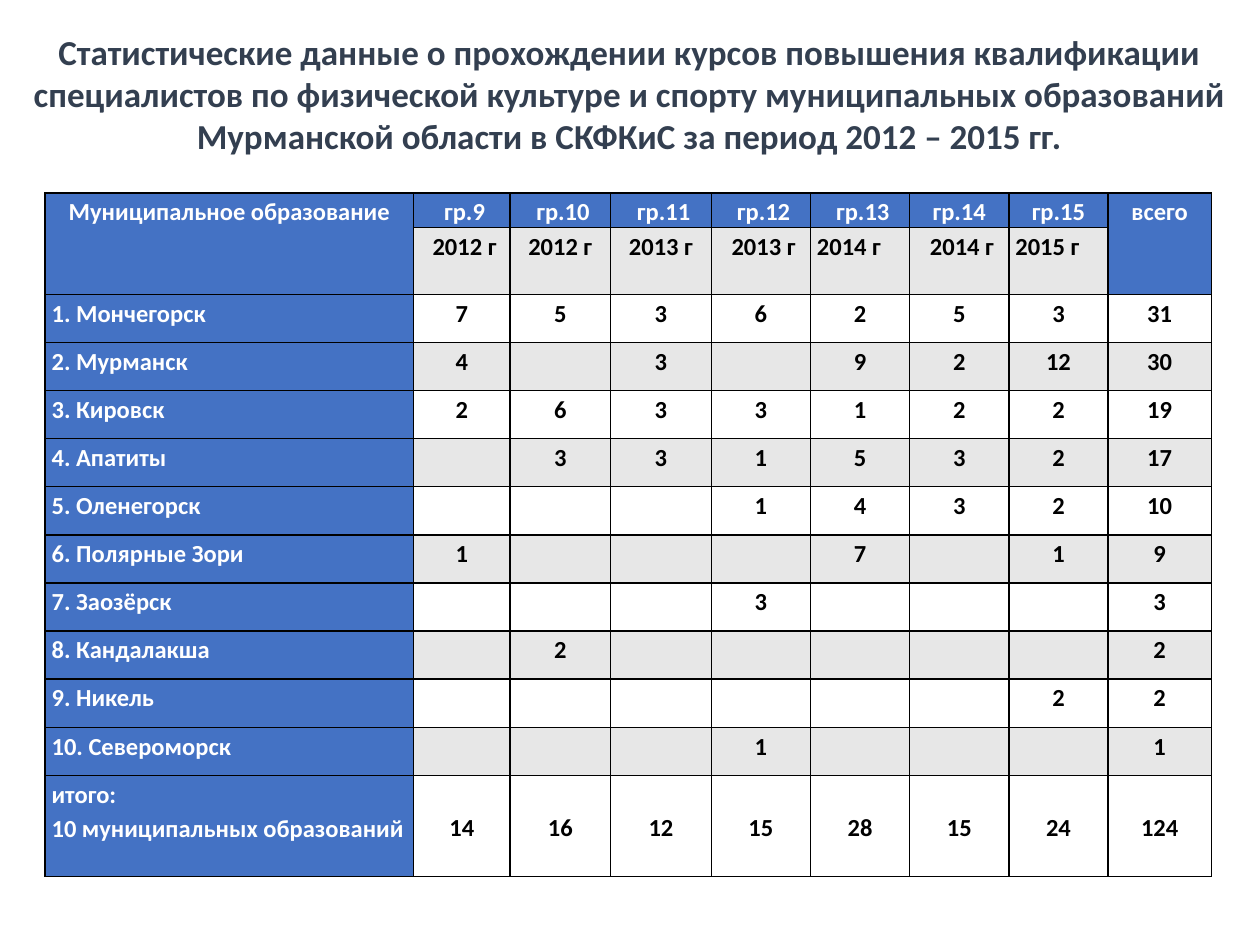
from dataclasses import dataclass

from lxml.etree import SubElement as Sub
from pptx import Presentation
from pptx.dml.color import RGBColor as RGB
from pptx.enum.text import MSO_ANCHOR as Anchor, MSO_AUTO_SIZE as Auto, PP_ALIGN as Align
from pptx.oxml.ns import qn
from pptx.util import Cm, Pt


@dataclass
class Theme:
    font: str = "Calibri"
    title: str = "333F50"
    head: str = "4472C4"
    band: str = "E7E7E7"
    plain: str = "FFFFFF"
    ink: str = "000000"
    big: int = 20
    small: int = 14
    line: int = 1


theme = Theme()


def style(para, size, color, align):
    para.alignment = align
    looks = {"name": theme.font, "size": Pt(size), "bold": True}
    for key, value in looks.items():
        setattr(para.font, key, value)
    para.font.color.rgb = RGB.from_string(color)


def frame(cell):
    """Draw the four borders of a cell; call before setting its fill."""
    props = cell._tc.get_or_add_tcPr()
    for side in ("lnL", "lnR", "lnT", "lnB"):
        line = Sub(props, qn("a:" + side), w=str(Pt(theme.line)))
        Sub(Sub(line, qn("a:solidFill")), qn("a:srgbClr"), val=theme.ink)


deck = Presentation()
deck.slide_width, deck.slide_height = Cm(25.4), Cm(19.05)
slide = deck.slides.add_slide(deck.slide_layouts[5])

# Title
title = slide.shapes.title
place = {"left": Cm(0.36), "top": Cm(0.48), "width": Cm(24.66), "height": Cm(2.82)}
for key, value in place.items():
    setattr(title, key, value)
text = title.text_frame
text.text = (
    "Статистические данные о прохождении курсов повышения квалификации\n"
    "специалистов по физической культуре и спорту муниципальных образований "
    "Мурманской области в СКФКиС за период 2012 – 2015 гг."
)
setup = {"word_wrap": True, "auto_size": Auto.NONE, "vertical_anchor": Anchor.TOP}
for key, value in setup.items():
    setattr(text, key, value)
for para in text.paragraphs:
    style(para, theme.big, theme.title, Align.CENTER)

# Table data: an empty string is a blank cell
rows = [
    ["Муниципальное образование", "гр.9", "гр.10", "гр.11", "гр.12", "гр.13",
     "гр.14", "гр.15", "всего"],
    ["", "2012 г", "2012 г", "2013 г", "2013 г", "2014 г", "2014 г", "2015 г", ""],
    ["1. Мончегорск", 7, 5, 3, 6, 2, 5, 3, 31],
    ["2. Мурманск", 4, "", 3, "", 9, 2, 12, 30],
    ["3. Кировск", 2, 6, 3, 3, 1, 2, 2, 19],
    ["4. Апатиты", "", 3, 3, 1, 5, 3, 2, 17],
    ["5. Оленегорск", "", "", "", 1, 4, 3, 2, 10],
    ["6. Полярные Зори", 1, "", "", "", 7, "", 1, 9],
    ["7. Заозёрск", "", "", "", 3, "", "", "", 3],
    ["8. Кандалакша", "", 2, "", "", "", "", "", 2],
    ["9. Никель", "", "", "", "", "", "", 2, 2],
    ["10. Североморск", "", "", "", 1, "", "", "", 1],
    ["итого:\n10 муниципальных образований", 14, 16, 12, 15, 28, 15, 24, 124],
]
widths = [7.43, 1.94, 2.03, 2.03, 2, 2, 2, 2, 2.08]
heights = [0.69, 1.35] + [0.97] * 10 + [2.04]
last = len(rows) - 1
end = len(widths) - 1
shifted = {(0, c) for c in range(1, 6)} | {(1, 1), (1, 4), (1, 6)}
lefts = {(1, 5), (1, 7)}

table = slide.shapes.add_table(
    len(rows), len(widths), Cm(0.91), Cm(3.89), Cm(sum(widths)), Cm(sum(heights))
).table
table.horz_banding = False
for col, width in zip(table.columns, widths):
    col.width = Cm(width)
for row, height in zip(table.rows, heights):
    row.height = Cm(height)

for r, row in enumerate(rows):
    for c, value in enumerate(row):
        cell = table.cell(r, c)
        head = r == 0 or c == 0 or (r == 1 and c == end)
        inset = {
            "margin_left": Cm(0.24 if (r, c) in shifted else 0.13),
            "margin_right": Cm(0.13),
            "margin_top": 0,
            "margin_bottom": 0,
            "vertical_anchor": Anchor.MIDDLE if r == last and c else Anchor.TOP,
        }
        for key, setting in inset.items():
            setattr(cell, key, setting)
        frame(cell)
        cell.fill.solid()
        shade = theme.head if head else theme.band if r % 2 else theme.plain
        cell.fill.fore_color.rgb = RGB.from_string(shade)

        cell.text = str(value)
        align = Align.CENTER
        if (r, c) in lefts:
            align = Align.LEFT
        elif c == 0 and r > 1:
            align = Align.JUSTIFY
        for para in cell.text_frame.paragraphs:
            style(para, theme.small, theme.plain if head else theme.ink, align)
            para.line_spacing = 1.15

for c in (0, end):
    table.cell(0, c).merge(table.cell(1, c))

deck.save("out.pptx")
